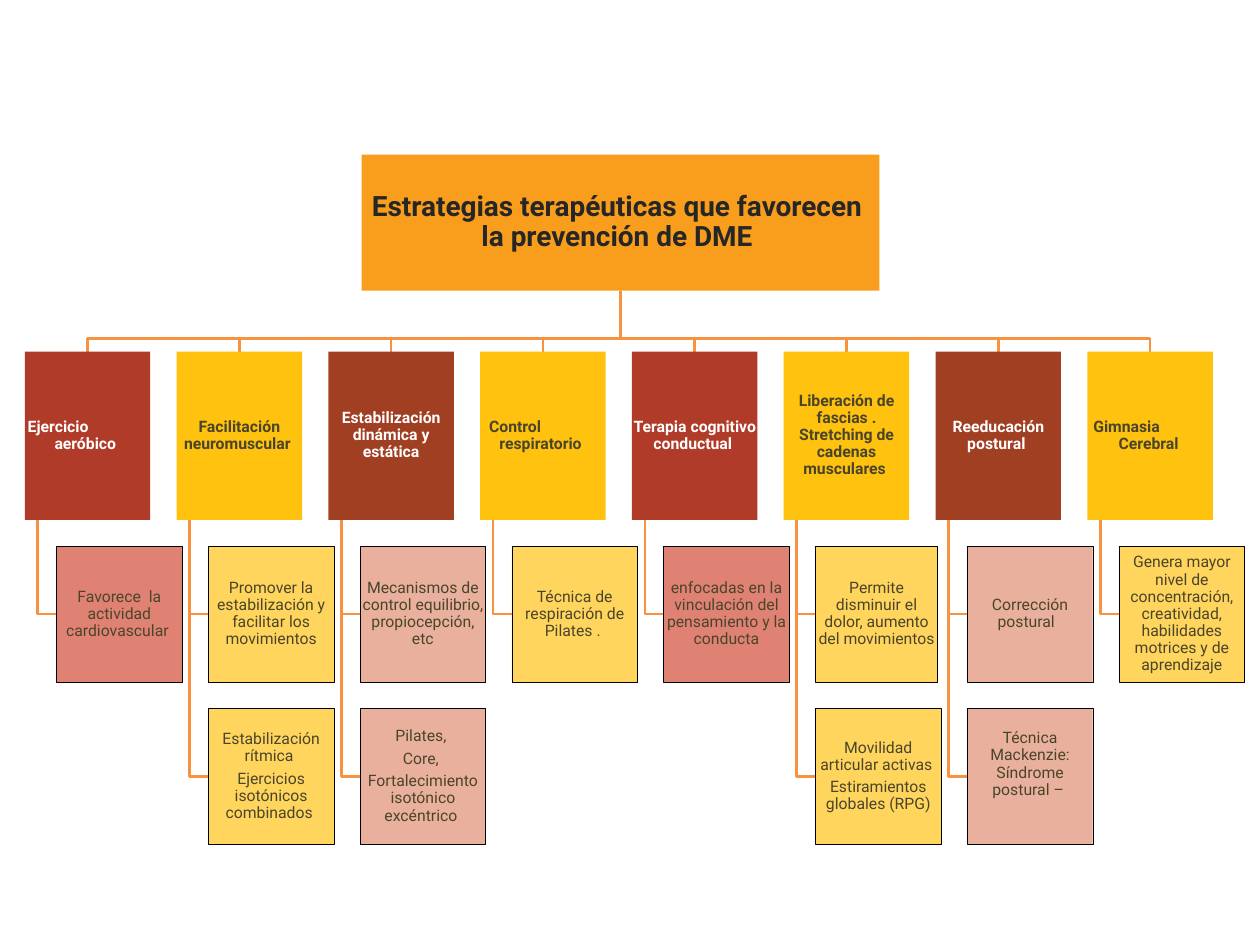
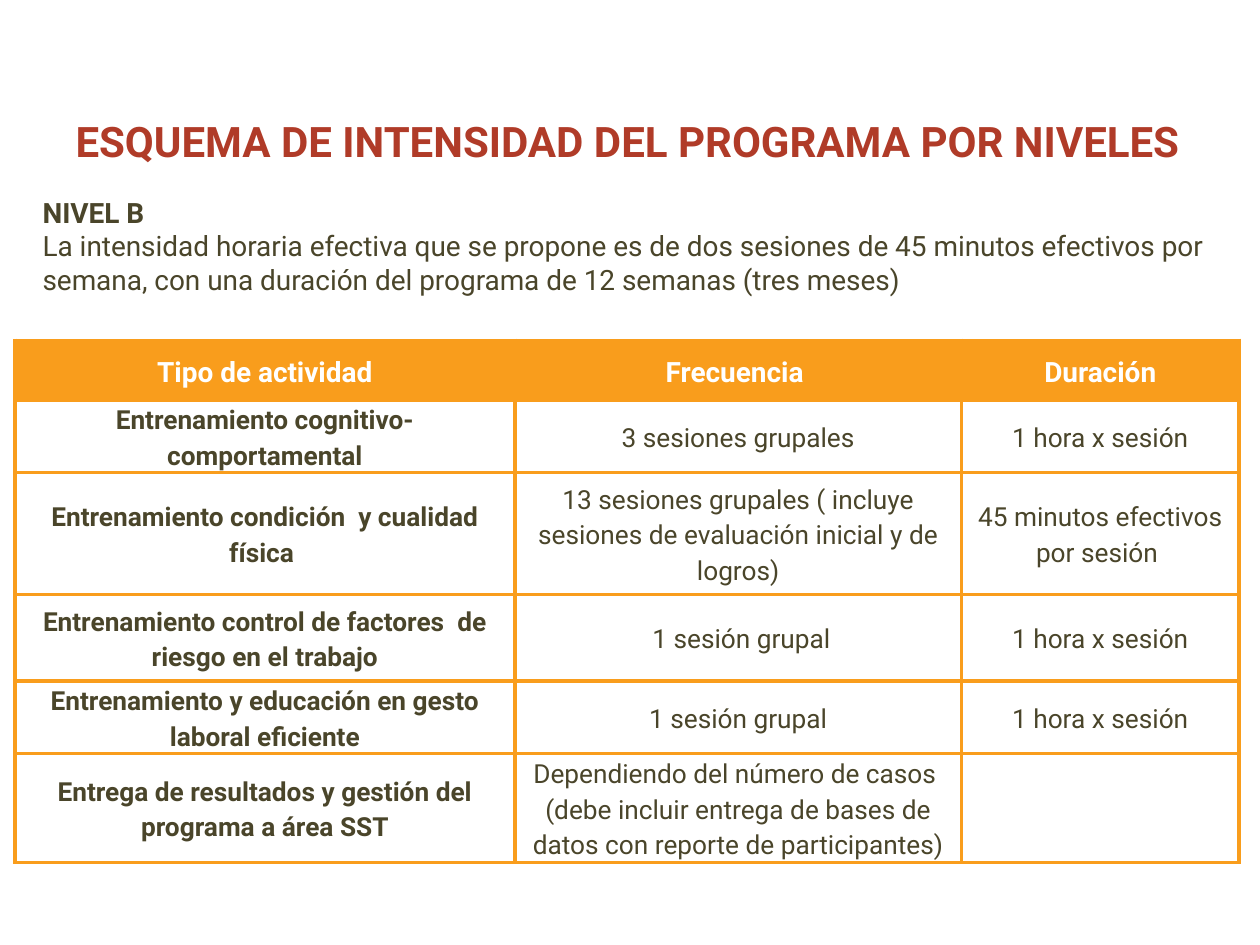
from dataclasses import dataclass
from typing import Any, NamedTuple, Optional

import pptx
import pptx.dml.color
import pptx.enum.shapes
import pptx.enum.text
import pptx.oxml
import pptx.oxml.ns
import pptx.util

Cm = pptx.util.Cm
Pt = pptx.util.Pt
Rgb = pptx.dml.color.RGBColor
Align = pptx.enum.text.PP_ALIGN
Anchor = pptx.enum.text.MSO_ANCHOR


@dataclass(frozen=True)
class Theme:
    font: str = "Roboto"
    orange: str = "F99D1C"
    link: str = "F69240"
    red: str = "B03B28"
    gold: str = "FFC20E"
    brown: str = "A13F22"
    rose: str = "DF8273"
    sand: str = "FFD55D"
    blush: str = "EAB09E"
    olive: str = "4A452A"
    ink: str = "262626"
    white: str = "FFFFFF"
    black: str = "000000"
    title: float = 24
    lead: float = 16
    body: float = 15
    small: float = 9
    gap: float = 3.15


THEME = Theme()


class Box(NamedTuple):
    left: float
    top: float
    width: float
    height: float

    def place(self) -> tuple:
        return tuple(Cm(side) for side in self)


class Style(NamedTuple):
    size: float
    color: str
    bold: bool = False


class Line(NamedTuple):
    text: str
    indent: Optional[float] = None
    after: float = THEME.gap


class Tone(NamedTuple):
    head: str
    text: str
    note: str


class Note(NamedTuple):
    lines: list[Line]
    width: float = 2.53
    foot: float = 0.02


class Branch(NamedTuple):
    tone: Tone
    head: list[Line]
    notes: list[Note]


RED = Tone(THEME.red, THEME.white, THEME.rose)
GOLD = Tone(THEME.gold, THEME.olive, THEME.sand)
BROWN = Tone(THEME.brown, THEME.white, THEME.blush)

ROOT = Box(7.29, 3.12, 10.44, 2.74)
HEAD = Box(0.5, 7.09, 2.53, 3.39)
STEP = 3.06
BAR = 6.83
STEM = 0.26
SHIFT = 0.64
FIRST = 11.01
DROP = 3.27
TALL = 2.74

TREE = [
    Branch(RED, [Line("Ejercicio", 0.04, 0), Line("aeróbico ", 0.58)],
           [Note([Line("Favorece  la actividad cardiovascular ")])]),
    Branch(GOLD, [Line("Facilitación neuromuscular ")],
           [Note([Line("Promover la estabilización y facilitar los movimientos")]),
            Note([Line("Estabilización rítmica "), Line("Ejercicios isotónicos combinados ")])]),
    Branch(BROWN, [Line("Estabilización dinámica y estática")],
           [Note([Line("Mecanismos de control equilibrio, propiocepción, etc")]),
            Note([Line("Pilates, "), Line("Core, "), Line("Fortalecimiento isotónico excéntrico ")])]),
    Branch(GOLD, [Line("Control", 0.16, 0), Line("respiratorio ", 0.37)],
           [Note([Line("Técnica de respiración de Pilates . ")])]),
    Branch(RED, [Line("Terapia cognitivo conductual ")],
           [Note([Line("enfocadas en la vinculación del pensamiento y la conducta")])]),
    Branch(GOLD, [Line("Liberación de fascias . Stretching de cadenas musculares ")],
           [Note([Line("Permite disminuir el dolor, aumento del movimientos")], width=2.46),
            Note([Line("Movilidad articular activas "), Line("Estiramientos globales (RPG)")])]),
    Branch(BROWN, [Line("Reeducación postural ")],
           [Note([Line("Corrección postural  ")]),
            Note([Line("Técnica Mackenzie: Síndrome postural – ")], foot=0.5)]),
    Branch(GOLD, [Line("Gimnasia", 0.1, 0), Line("Cerebral ", 0.61)],
           [Note([Line("Genera mayor nivel de concentración, creatividad, "
                       "habilidades motrices y de aprendizaje")])]),
]

COLS = [10.08, 9.0, 5.6]
ROWS = [1.2, 1.42, 2.46, 1.75, 1.42, 2.18]
CELLS = [
    ["Tipo de actividad", "Frecuencia ", "Duración"],
    ["Entrenamiento cognitivo-comportamental", "3 sesiones grupales", "1 hora x sesión"],
    ["Entrenamiento condición  y cualidad física ",
     "13 sesiones grupales ( incluye sesiones de evaluación inicial y de logros)",
     "45 minutos efectivos por sesión "],
    ["Entrenamiento control de factores  de riesgo en el trabajo",
     "\u00a01 sesión grupal".replace("\u00a0", " "), "1 hora x sesión"],
    ["Entrenamiento y educación en gesto laboral eficiente", "1 sesión grupal", "1 hora x sesión"],
    ["Entrega de resultados y gestión del programa a área SST",
     "Dependiendo del número de casos  (debe incluir entrega de bases de datos "
     "con reporte de participantes)", ""],
]


def write(para: Any, text: str, style: Style) -> None:
    run = para.add_run()
    run.text = text
    font = run.font
    font.name, font.size, font.bold = THEME.font, Pt(style.size), style.bold
    font.color.rgb = Rgb.from_string(style.color)


def next_para(frame: Any, index: int) -> Any:
    return frame.add_paragraph() if index else frame.paragraphs[0]


def add_node(slide: Any, box: Box, fill: str, lines: list[Line], style: Style,
             edge: bool = False, foot: float = 0.02) -> None:
    shape = slide.shapes.add_shape(pptx.enum.shapes.MSO_SHAPE.RECTANGLE, *box.place())
    shape.shadow.inherit = False
    shape.fill.solid()
    shape.fill.fore_color.rgb = Rgb.from_string(fill)
    if edge:
        shape.line.color.rgb = Rgb.from_string(THEME.black)
        shape.line.width = Pt(0.25)
    else:
        shape.line.fill.background()
    frame = shape.text_frame
    frame.word_wrap = True
    frame.vertical_anchor = Anchor.MIDDLE
    frame.margin_left = frame.margin_right = frame.margin_top = Cm(0.02)
    frame.margin_bottom = Cm(foot)
    for index, line in enumerate(lines):
        para = next_para(frame, index)
        para.alignment = Align.CENTER
        para.line_spacing = 0.9
        para.space_after = Pt(line.after)
        if line.indent is not None:
            para.alignment = Align.LEFT
            para._p.get_or_add_pPr().set("marL", str(Cm(line.indent)))
        write(para, line.text, style)


def add_link(slide: Any, points: list[tuple[float, float]]) -> None:
    start, *rest = [(Cm(x), Cm(y)) for x, y in points]
    pen = slide.shapes.build_freeform(*start, scale=1.0)
    pen.add_line_segments(rest, close=False)
    link = pen.convert_to_shape()
    link.shadow.inherit = False
    link.fill.background()
    link.line.color.rgb = Rgb.from_string(THEME.link)
    link.line.width = Pt(1.5)


def draw_tree(slide: Any) -> None:
    mid = ROOT.left + ROOT.width / 2
    base = HEAD.top + HEAD.height
    for index, branch in enumerate(TREE):
        head = HEAD._replace(left=HEAD.left + index * STEP)
        peak = head.left + head.width / 2
        add_link(slide, [(mid, ROOT.top + ROOT.height), (mid, BAR), (peak, BAR), (peak, head.top)])
        stem = head.left + STEM
        for level, note in enumerate(branch.notes):
            box = Box(head.left + SHIFT, FIRST + level * DROP, note.width, TALL)
            level_y = box.top + TALL / 2
            add_link(slide, [(stem, base), (stem, level_y), (box.left, level_y)])
            add_node(slide, box, branch.tone.note, note.lines,
                     Style(THEME.small, THEME.olive), True, note.foot)
        add_node(slide, head, branch.tone.head, branch.head,
                 Style(THEME.small, branch.tone.text, True))
    add_node(slide, ROOT, THEME.orange,
             [Line("Estrategias terapéuticas que favorecen  la prevención de DME ", after=5.6)],
             Style(THEME.lead, THEME.ink, True))


def add_text(slide: Any, box: Box, lines: list[tuple[str, Style]]) -> list[Any]:
    frame = slide.shapes.add_textbox(*box.place()).text_frame
    frame.word_wrap = True
    for index, (text, style) in enumerate(lines):
        write(next_para(frame, index), text, style)
    return list(frame.paragraphs)


def add_edges(cell: Any) -> None:
    props = cell._tc.get_or_add_tcPr()
    for side in ("lnL", "lnR", "lnT", "lnB"):
        props.append(pptx.oxml.parse_xml(
            f'<a:{side} {pptx.oxml.ns.nsdecls("a")} w="{Pt(2.25)}"><a:solidFill>'
            f'<a:srgbClr val="{THEME.orange}"/></a:solidFill></a:{side}>'))


def draw_grid(slide: Any) -> None:
    box = Box(0.3, 6.86, sum(COLS), sum(ROWS))
    table = slide.shapes.add_table(len(ROWS), len(COLS), *box.place()).table
    table.first_row = table.horz_banding = False
    for col, width in zip(table.columns, COLS):
        col.width = Cm(width)
    for row, height in zip(table.rows, ROWS):
        row.height = Cm(height)
    for y, texts in enumerate(CELLS):
        for x, text in enumerate(texts):
            cell = table.cell(y, x)
            add_edges(cell)
            cell.vertical_anchor = Anchor.MIDDLE
            cell.margin_left = cell.margin_right = Cm(0.18)
            cell.margin_top = cell.margin_bottom = Cm(0)
            if y:
                cell.fill.background()
                style = Style(THEME.body, THEME.olive, x == 0)
            else:
                cell.fill.solid()
                cell.fill.fore_color.rgb = Rgb.from_string(THEME.orange)
                style = Style(THEME.lead, THEME.white, True)
            if text:
                para = cell.text_frame.paragraphs[0]
                para.alignment = Align.CENTER
                para.line_spacing = 1.15
                para.space_after = Pt(10)
                write(para, text, style)


def draw_levels(slide: Any) -> None:
    title, = add_text(slide, Box(0.1, 1.73, 25.1, 1.57), [
        ("ESQUEMA DE INTENSIDAD DEL PROGRAMA POR NIVELES",
         Style(THEME.title, THEME.red, True))])
    title.alignment = Align.CENTER
    title.line_spacing = Pt(42)
    add_text(slide, Box(0.61, 3.81, 24.28, 2.31), [
        ("NIVEL B", Style(THEME.lead, THEME.olive, True)),
        ("La intensidad horaria efectiva que se propone es de dos sesiones de 45 minutos "
         "efectivos por semana, con una duración del programa de 12 semanas (tres meses)",
         Style(THEME.lead, THEME.olive))])
    draw_grid(slide)


def main() -> None:
    deck = pptx.Presentation()
    deck.slide_width, deck.slide_height = Cm(25.4), Cm(19.05)
    for draw in (draw_tree, draw_levels):
        draw(deck.slides.add_slide(deck.slide_layouts[6]))
    deck.save("out.pptx")


if __name__ == "__main__":
    main()
